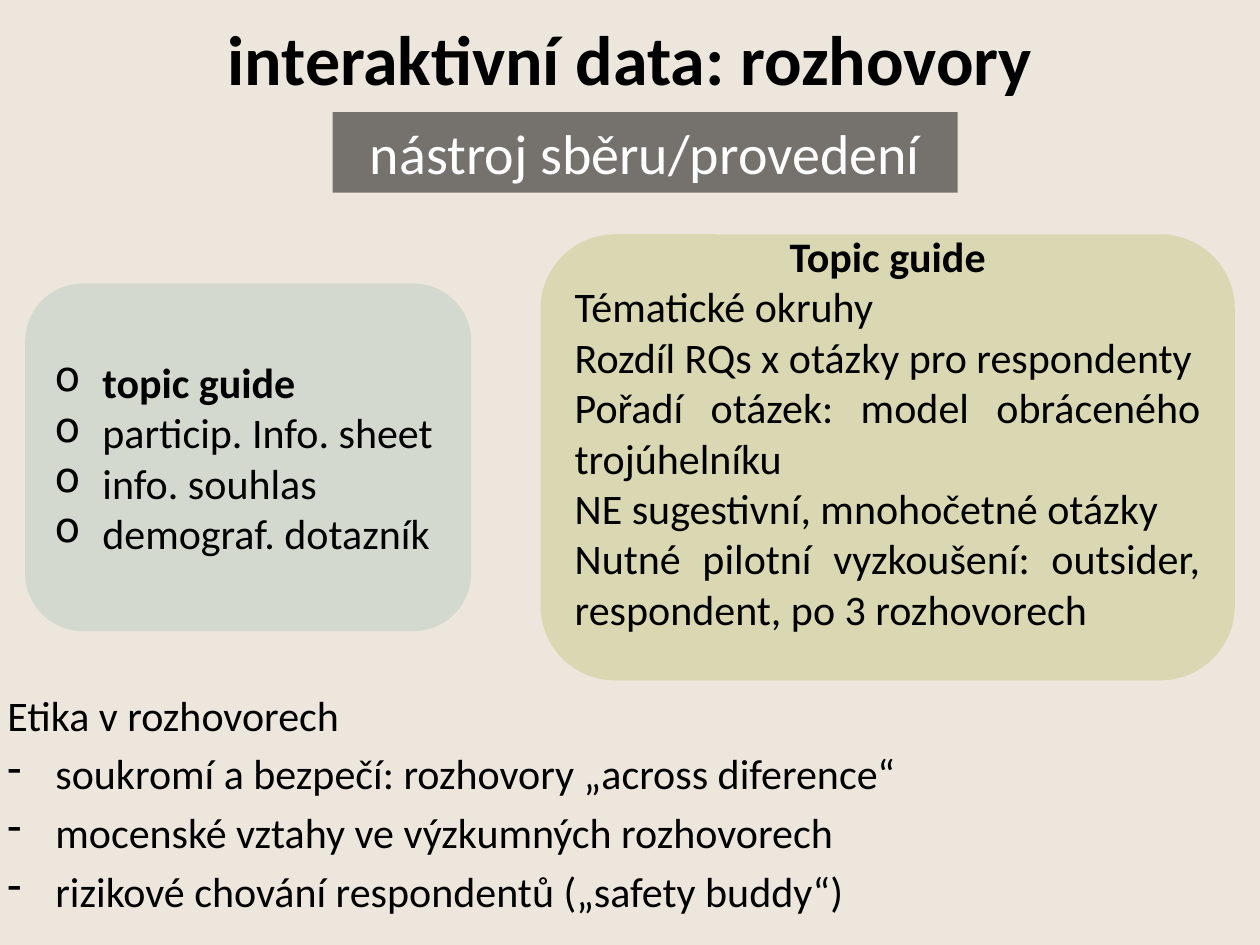
from lxml import etree
from pptx import Presentation
from pptx.dml.color import RGBColor
from pptx.enum.shapes import MSO_SHAPE
from pptx.enum.text import MSO_ANCHOR, PP_ALIGN
from pptx.oxml.ns import qn
from pptx.util import Inches, Pt

RECT, ROUND = MSO_SHAPE.RECTANGLE, MSO_SHAPE.ROUNDED_RECTANGLE
TOP, MIDDLE = MSO_ANCHOR.TOP, MSO_ANCHOR.MIDDLE
CENTER, JUSTIFY = PP_ALIGN.CENTER, PP_ALIGN.JUSTIFY


def rgb(value):
    return RGBColor.from_string(value)


class Deck:
    font = "Calibri"
    text_color = "000000"
    body_size = 24
    indent = 0.38

    def __init__(self, width, height, background):
        self.prs = Presentation()
        self.prs.slide_width = Inches(width)
        self.prs.slide_height = Inches(height)
        self.s = self.prs.slides.add_slide(self.prs.slide_layouts[6])
        fill = self.s.background.fill
        fill.solid()
        fill.fore_color.rgb = rgb(background)

    def frame(self, sp, anchor):
        tf = sp.text_frame
        tf.word_wrap = True
        tf.vertical_anchor = anchor
        return tf

    def textbox(self, x, y, w, h, anchor=TOP):
        sp = self.s.shapes.add_textbox(Inches(x), Inches(y), Inches(w), Inches(h))
        return self.frame(sp, anchor)

    def panel(self, kind, x, y, w, h, color, anchor=MIDDLE, alpha=None):
        sp = self.s.shapes.add_shape(kind, Inches(x), Inches(y), Inches(w), Inches(h))
        sp.shadow.inherit = False
        sp.fill.solid()
        sp.fill.fore_color.rgb = rgb(color)
        sp.line.fill.background()
        if alpha is not None:
            clr = sp.fill._xPr.find(qn("a:solidFill"))[0]
            etree.SubElement(clr, qn("a:alpha")).set("val", str(alpha * 1000))
        return self.frame(sp, anchor)

    def paragraph(self, tf, text, size=body_size, color=text_color, bold=False,
                  align=JUSTIFY, bullet=None, before=0):
        p = tf.paragraphs[0] if not tf.text else tf.add_paragraph()
        p.text = text
        p.alignment = align
        p.space_before = Pt(before)
        p.font.name = self.font
        p.font.size = Pt(size)
        p.font.bold = bold
        p.font.color.rgb = rgb(color)
        if bullet:
            self.bullet(p, bullet)

    def bullet(self, p, char):
        pPr = p._p.get_or_add_pPr()
        pPr.set("marL", str(Inches(self.indent)))
        pPr.set("indent", str(-Inches(self.indent)))
        bu = etree.Element(qn("a:buChar"), char=char)
        pPr.find(qn("a:defRPr")).addprevious(bu)


def main():
    deck = Deck(10, 7.5, "ECE6DD")

    title = deck.textbox(0.5, 0, 9, 0.92, MIDDLE)
    deck.paragraph(title, "interaktivní data: rozhovory", 40, bold=True, align=CENTER)

    ethics = deck.textbox(0, 5.42, 10, 2.05)
    ethics.margin_left = Inches(0.06)
    deck.paragraph(ethics, "Etika v rozhovorech")
    for text in ("soukromí a bezpečí: rozhovory „across diference“",
                 "mocenské vztahy ve výzkumných rozhovorech",
                 "rizikové chování respondentů („safety buddy“)"):
        deck.paragraph(ethics, text, bullet="-", before=4.8)

    banner = deck.panel(RECT, 2.64, 0.89, 4.96, 0.64, "000000", TOP, alpha=50)
    deck.paragraph(banner, "nástroj sběru/provedení", 32, "FFFFFF", align=CENTER)

    tools = deck.panel(ROUND, 0.2, 2.25, 3.54, 2.76, "D4D9CF")
    deck.paragraph(tools, "topic guide", bold=True, bullet="o")
    for text in ("particip. Info. sheet", "info. souhlas", "demograf. dotazník"):
        deck.paragraph(tools, text, bullet="o")

    guide = deck.panel(ROUND, 4.29, 1.86, 5.51, 3.54, "DAD7B3")
    guide.margin_bottom = Inches(0.45)
    deck.paragraph(guide, "Topic guide", bold=True, align=CENTER)
    for text in ("Tématické okruhy",
                 "Rozdíl RQs x otázky pro respondenty",
                 "Pořadí otázek: model obráceného trojúhelníku",
                 "NE sugestivní, mnohočetné otázky",
                 "Nutné pilotní vyzkoušení: outsider, respondent, po 3 rozhovorech"):
        deck.paragraph(guide, text)

    deck.prs.save("out.pptx")


if __name__ == "__main__":
    main()
